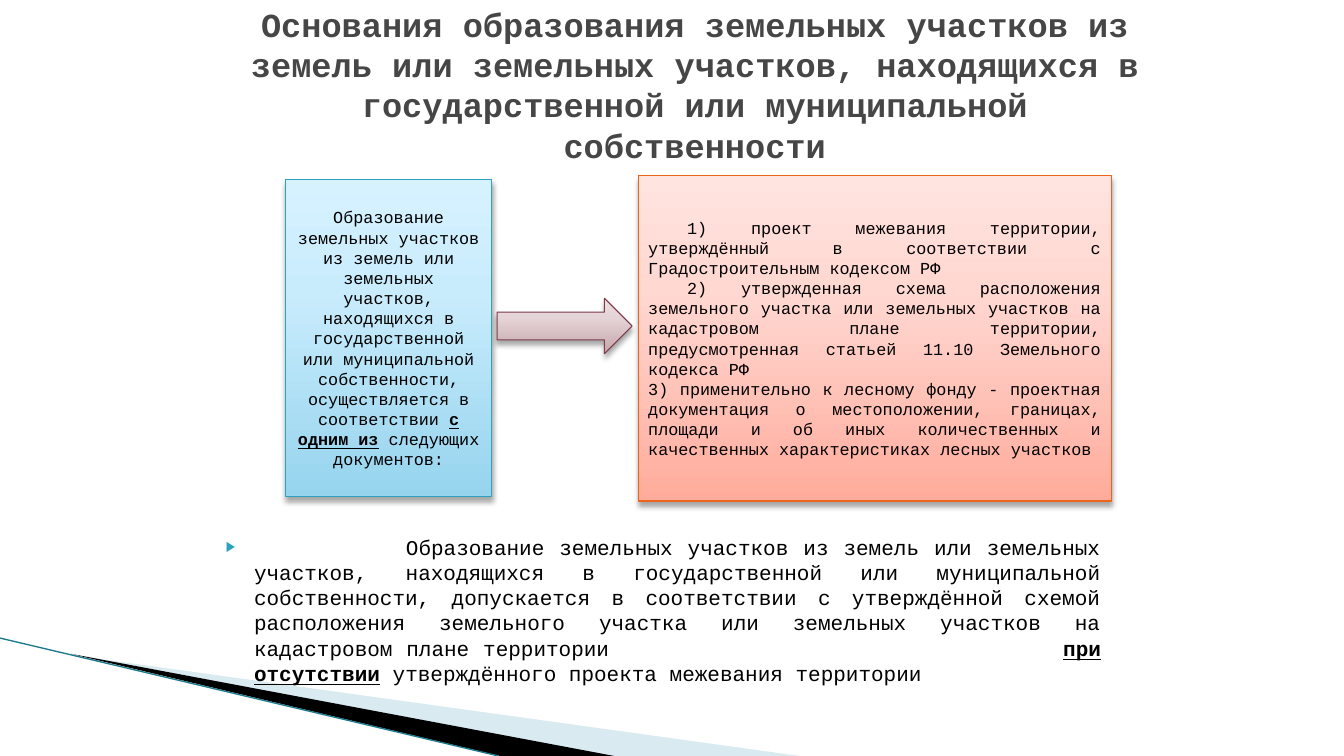
import copy
import pptx
import pptx.dml.color
import pptx.enum.shapes
import pptx.enum.text
import pptx.oxml
import pptx.util
from dataclasses import dataclass

SHAPE = pptx.enum.shapes.MSO_SHAPE
ALIGN = pptx.enum.text.PP_ALIGN
WIDTH, HEIGHT = pptx.util.Inches(13.33), pptx.util.Inches(7.5)


@dataclass(frozen=True)
class Theme:
    font: str = "Courier New"
    title_size: int = 24
    body_size: int = 15
    box_size: int = 12
    title: str = "464646"
    text: str = "000000"
    accent: str = "2DA2BF"
    wave: str = "A0CBDC"
    wave_edge: str = "1F7A8C"
    # Gradient colours run from bottom to top, the outline comes last
    blue: tuple = ("96D4EE", "C9ECFC", "D7F2FF", "2DA2BF")
    red: tuple = ("FFAC9C", "FFD8D2", "FFE4DF", "EB641B")
    plum: tuple = ("C4A5A9", "E5D4D7", "EEE0E2", "7D3C4A")


THEME = Theme()

TITLE = ("Основания образования земельных участков из земель или земельных участков, "
         "находящихся в государственной или муниципальной собственности")
# Each paragraph is a list of (text, emphasised) pairs
CLAIM = [[("Образование земельных участков из земель или земельных участков, находящихся в "
           "государственной или муниципальной собственности, осуществляется в соответствии ", False),
          ("с одним из", True),
          (" следующих документов:", False)]]
DOCUMENTS = [
    [("1) проект межевания территории, утверждённый в соответствии с Градостроительным "
      "кодексом РФ", False)],
    [("2) утвержденная схема расположения земельного участка или земельных участков на "
      "кадастровом плане территории, предусмотренная статьей 11.10 Земельного кодекса РФ", False)],
    [("3) применительно к лесному фонду - проектная документация о местоположении, границах, "
      "площади и об иных количественных и качественных характеристиках лесных участков", False)],
]
NOTE = [[("\tОбразование земельных участков из земель или земельных участков, находящихся в "
          "государственной или муниципальной собственности, допускается в соответствии с "
          "утверждённой схемой расположения земельного участка или земельных участков на "
          "кадастровом плане территории\t", False),
         ("при отсутствии", True),
         (" утверждённого проекта межевания территории", False)]]


def x(percent):
    return round(WIDTH * percent / 100)


def y(percent):
    return round(HEIGHT * percent / 100)


def frame(left, top, width, height):
    """Turn shares of the slide, in percent, into lengths."""
    return x(left), y(top), x(width), y(height)


def rgb(code):
    return pptx.dml.color.RGBColor.from_string(code)


def xml(text):
    ns = 'xmlns:a="http://schemas.openxmlformats.org/drawingml/2006/main"'
    return pptx.oxml.parse_xml(text.replace(">", f" {ns}>", 1) if "/>" not in text.split(">")[0] + ">"
                               else text.replace("/>", f" {ns}/>", 1))


def style_run(r, size, color, bold=False, underline=False):
    r.font.name, r.font.size = THEME.font, pptx.util.Pt(size)
    r.font.color.rgb = rgb(color)
    r.font.bold, r.font.underline = bold, underline


def write(tf, paragraphs, size, align):
    tf.word_wrap = True
    tf.auto_size = pptx.enum.text.MSO_AUTO_SIZE.NONE
    for i, parts in enumerate(paragraphs):
        p = tf.paragraphs[0] if i == 0 else tf.add_paragraph()
        p.alignment, p.space_before = align, pptx.util.Pt(0)
        for text, strong in parts:
            r = p.add_run()
            r.text = text
            style_run(r, size, THEME.text, strong, strong)


def place(sp, box):
    sp.left, sp.top, sp.width, sp.height = frame(*box)


def add_title(s, box):
    sp = s.shapes.title
    place(sp, box)
    tf = sp.text_frame
    tf.text = TITLE
    tf.word_wrap = True
    tf.auto_size = pptx.enum.text.MSO_AUTO_SIZE.NONE
    tf.vertical_anchor = pptx.enum.text.MSO_ANCHOR.MIDDLE
    p = tf.paragraphs[0]
    p.alignment = ALIGN.CENTER
    style_run(p.runs[0], THEME.title_size, THEME.title, bold=True)


def add_note(s, box, tabs):
    sp = s.placeholders[1]
    place(sp, box)
    write(sp.text_frame, NOTE, THEME.body_size, ALIGN.JUSTIFY)
    pPr = sp.text_frame.paragraphs[0]._p.get_or_add_pPr()
    pPr.set("marL", str(x(3)))
    pPr.set("indent", str(-x(2.1)))
    stops = "".join(f'<a:tab pos="{x(tab)}" algn="l"/>' for tab in tabs)
    for part in (f'<a:buClr><a:srgbClr val="{THEME.accent}"/></a:buClr>',
                 '<a:buSzPct val="68000"/>',
                 '<a:buFont typeface="Arial"/>',
                 '<a:buChar char="▶"/>',
                 f'<a:tabLst>{stops}</a:tabLst>'):
        pPr.append(xml(part))


def add_block(s, kind, box, colors):
    """Add a shape with a three-stop upward gradient and a soft shadow."""
    sp = s.shapes.add_shape(kind, *frame(*box))
    sp.fill.gradient()
    sp.fill.gradient_angle = 90
    first = sp.fill.gradient_stops[0]._gs
    first.addnext(copy.deepcopy(first))
    for stop, position, color in zip(sp.fill.gradient_stops, (0, 0.65, 1), colors):
        stop.position = position
        stop.color.rgb = rgb(color)
    sp.line.color.rgb = rgb(colors[-1])
    sp.line.width = pptx.util.Pt(0.75)
    sp.shadow.inherit = False
    sp._element.spPr.find(pptx.oxml.ns.qn("a:effectLst")).append(xml(
        f'<a:outerShdw blurRad="{pptx.util.Pt(4)}" dist="{pptx.util.Pt(3)}" dir="5400000" '
        'rotWithShape="0"><a:srgbClr val="000000"><a:alpha val="35000"/></a:srgbClr></a:outerShdw>'))
    return sp


def add_text_block(s, box, colors, paragraphs, align):
    sp = add_block(s, SHAPE.RECTANGLE, box, colors)
    sp.text_frame.vertical_anchor = pptx.enum.text.MSO_ANCHOR.MIDDLE
    write(sp.text_frame, paragraphs, THEME.box_size, align)
    return sp


def add_wave(s, points, color, opacity=100):
    corners = [(x(px), y(py)) for px, py in points]
    builder = s.shapes.build_freeform(*corners[0])
    builder.add_line_segments(corners[1:], close=True)
    sp = builder.convert_to_shape()
    sp.fill.solid()
    sp.fill.fore_color.rgb = rgb(color)
    sp.line.fill.background()
    sp.shadow.inherit = False
    fill = sp._element.spPr.find(pptx.oxml.ns.qn("a:solidFill"))
    fill[0].append(xml(f'<a:alpha val="{opacity * 1000}"/>'))
    return sp


def add_wave_edge(s, start, end):
    line = s.shapes.add_connector(pptx.enum.shapes.MSO_CONNECTOR.STRAIGHT,
                                  x(start[0]), y(start[1]), x(end[0]), y(end[1]))
    line.line.color.rgb = rgb(THEME.wave_edge)
    line.line.width = pptx.util.Pt(0.95)
    line._element.spPr.append(xml("<a:effectLst/>"))
    return line


def main():
    prs = pptx.Presentation()
    prs.slide_width, prs.slide_height = WIDTH, HEIGHT
    s = prs.slides.add_slide(prs.slide_layouts[1])

    # Corner decoration, sent behind the text
    decor = [add_wave(s, [(5.5, 86.7), (59.5, 100), (45.6, 100)], THEME.wave, 40),
             add_wave(s, [(5.3, 86.5), (45.7, 100), (37.2, 100)], THEME.text),
             add_wave_edge(s, (0, 84.4), (37.1, 100))]
    for i, sp in enumerate(decor):
        sp._element.getparent().insert(2 + i, sp._element)

    # Title and closing note
    add_title(s, (16.35, 2.8, 70.67, 16.67))
    add_note(s, (15.15, 70, 67.52, 18.4), tabs=(14.3, 63.2))

    # Claim, arrow and list of documents
    documents = add_text_block(s, (47.49, 23.2, 35.18, 43.07), THEME.red, DOCUMENTS, ALIGN.JUSTIFY)
    for p in documents.text_frame.paragraphs[:2]:
        p._p.get_or_add_pPr().set("indent", str(x(2.9)))
    add_text_block(s, (21.23, 23.73, 15.38, 42), THEME.blue, CLAIM, ALIGN.CENTER)
    add_block(s, SHAPE.RIGHT_ARROW, (36.98, 39.47, 10.05, 7.33), THEME.plum)

    prs.save("out.pptx")


if __name__ == "__main__":
    main()
